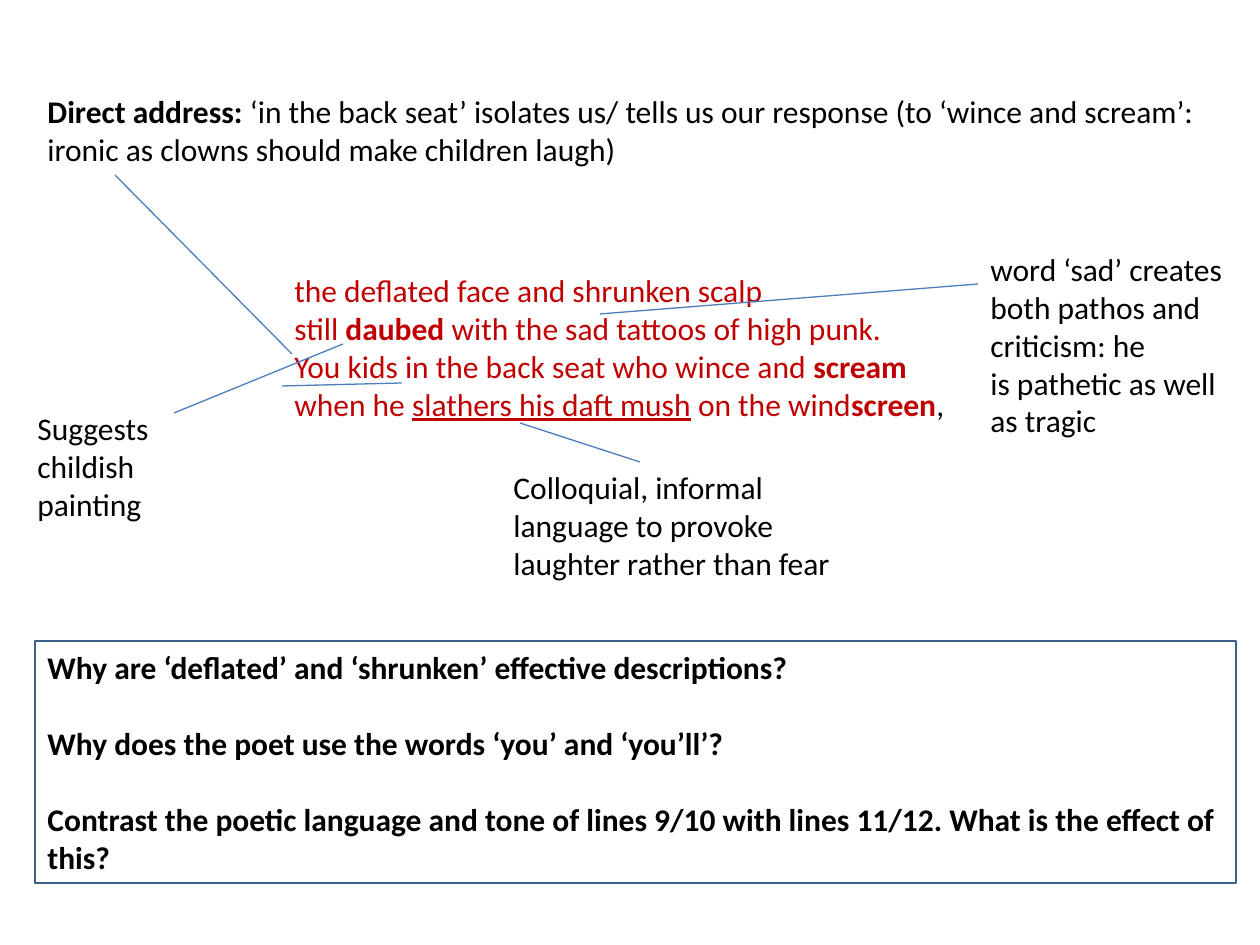
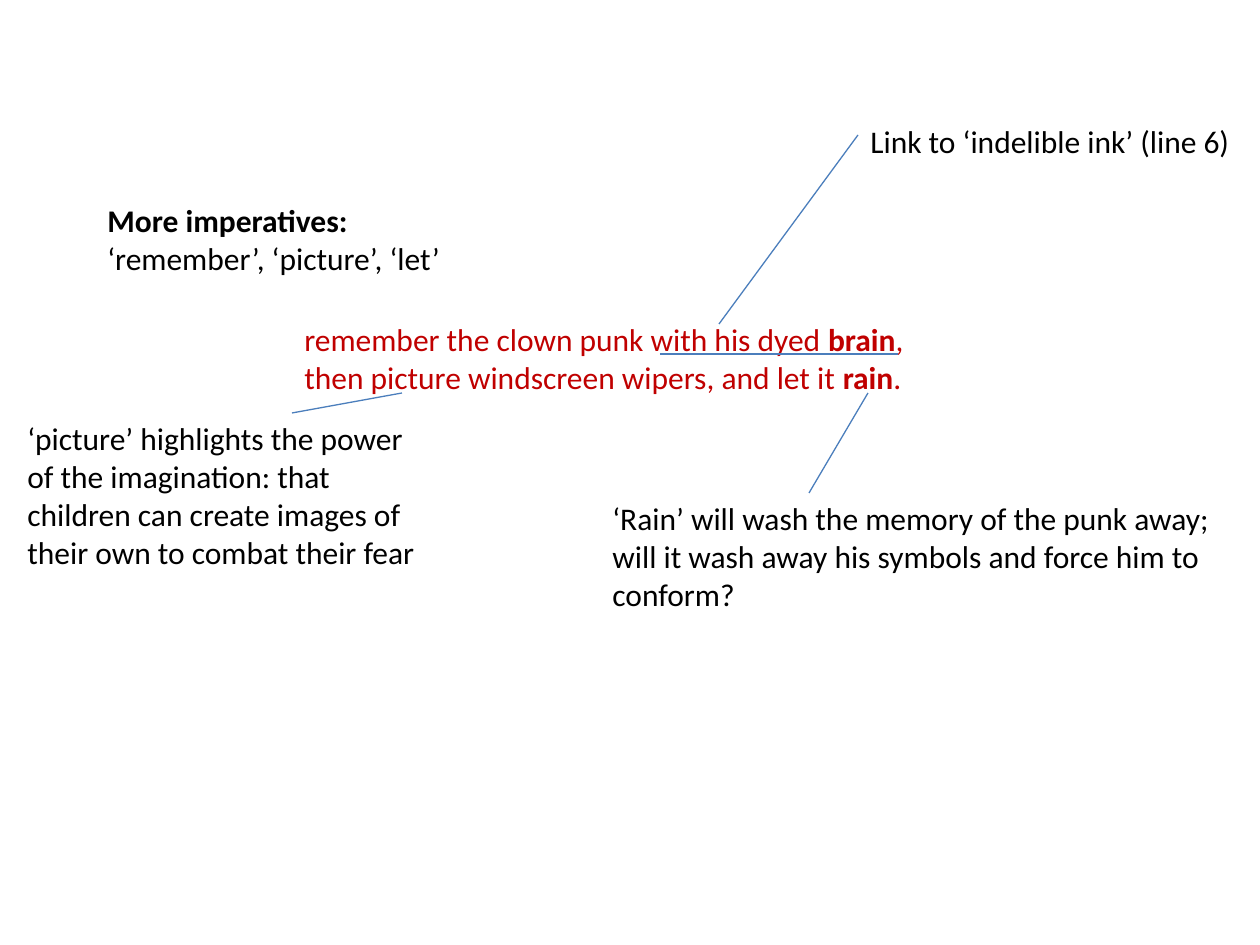
from lxml import etree
from pptx import Presentation
from pptx.dml.color import RGBColor
from pptx.enum.shapes import MSO_CONNECTOR, MSO_SHAPE
from pptx.enum.text import MSO_ANCHOR, PP_ALIGN
from pptx.oxml.ns import qn
from pptx.util import Pt

RECT = MSO_SHAPE.RECTANGLE
STRAIGHT = MSO_CONNECTOR.STRAIGHT
LEFT, TOP, MIDDLE = PP_ALIGN.LEFT, MSO_ANCHOR.TOP, MSO_ANCHOR.MIDDLE
SCALE = 914400 / 126
FONT, SIZE = "Calibri", 18
BLACK, RED, BLUE, NAVY = "000000", "C00000", "4B7EBC", "3A5F8C"


def px(*values):
    return [round(v * SCALE) for v in values]


def rgb(code):
    return RGBColor.from_string(code)


def write(frame, paras, color=BLACK, bold=None, gap=0, anchor=TOP):
    """Each paragraph is a string, or a list of strings and (text, style) pairs.

    A style is "b" for bold, "u" for underlined, or a colour.
    """
    frame.word_wrap = True
    frame.vertical_anchor = anchor
    for i, parts in enumerate(paras):
        para = frame.paragraphs[0] if i == 0 else frame.add_paragraph()
        para.alignment = LEFT
        para.space_before = Pt(gap if i else 0)
        font = para.font
        font.name, font.size, font.bold = FONT, Pt(SIZE), bold
        font.color.rgb = rgb(color)
        for part in [parts] if isinstance(parts, str) else parts:
            text, style = (part, "") if isinstance(part, str) else part
            run = para.add_run()
            run.text = text
            if style == "b":
                run.font.bold = True
            elif style == "u":
                run.font.underline = True
            elif style:
                run.font.color.rgb = rgb(style)


def note(slide, box, *paras, color=BLACK):
    write(slide.shapes.add_textbox(*px(*box)).text_frame, paras, color)


def link(slide, *ends):
    line = slide.shapes.add_connector(STRAIGHT, *px(*ends))
    line.line.color.rgb = rgb(BLUE)
    line.line.width = Pt(0.75)
    etree.SubElement(line._element.spPr, qn("a:effectLst"))


def panel(slide, box, *paras):
    shape = slide.shapes.add_shape(RECT, *px(*box))
    shape.shadow.inherit = False
    shape.fill.background()
    shape.line.color.rgb = rgb(NAVY)
    shape.line.width = Pt(0.75)
    write(shape.text_frame, paras, bold=True, gap=22, anchor=MIDDLE)


def address(slide):
    note(slide, (282, 265, 683, 204),
         "the deflated face and shrunken scalp",
         ["still ", ("daubed", "b"), " with the sad tattoos of high punk."],
         ["You kids in the back seat who wince and ", ("scream", "b")],
         ["when he ", ("slathers his daft mush", "u"), " on the wind",
          ("screen", "b"), (",", BLACK)],
         color=RED)
    link(slide, 343, 344, 174, 413)
    note(slide, (25, 403, 228, 127), "Suggests childish painting")
    link(slide, 282, 386, 402, 383)
    link(slide, 292, 354, 115, 175)
    note(slide, (35, 86, 1181, 89),
         [("Direct address: ", "b"),
          "‘in the back seat’ isolates us/ tells us our response (to ‘wince "
          "and scream’: ironic as clowns should make children laugh)"])
    panel(slide, (35, 641, 1201, 242),
          "Why are ‘deflated’ and ‘shrunken’ effective descriptions?",
          "Why does the poet use the words ‘you’ and ‘you’ll’?",
          "Contrast the poetic language and tone of lines 9/10 with lines "
          "11/12. What is the effect of this?")
    note(slide, (978, 244, 268, 204), "word ‘sad’ creates",
         "both pathos and criticism: he", "is pathetic as well as tragic")
    link(slide, 600, 314, 978, 284)
    note(slide, (501, 462, 397, 127),
         "Colloquial, informal language to provoke laughter rather than fear")
    link(slide, 520, 423, 640, 462)


def ending(slide):
    note(slide, (292, 314, 630, 127),
         ["remember the clown punk with his dyed ", ("brain", "b"), ","],
         ["then picture windscreen wipers, and let it ", ("rain", "b"), "."],
         color=RED)
    link(slide, 660, 354, 898, 354)
    link(slide, 719, 324, 858, 135)
    note(slide, (858, 116, 388, 50), "Link to ‘indelible ink’ (line 6)")
    link(slide, 868, 393, 809, 493)
    note(slide, (600, 493, 625, 127),
         "‘Rain’ will wash the memory of the punk away; will it wash away "
         "his symbols and force him to conform?")
    note(slide, (15, 413, 630, 165),
         "‘picture’ highlights the power", "of the imagination: that",
         "children can create images of", "their own to combat their fear")
    link(slide, 402, 393, 292, 413)
    note(slide, (95, 195, 387, 89),
         [("More imperatives: ", "b"), "‘remember’, ‘picture’, ‘let’"])


def main():
    deck = Presentation()
    deck.slide_width, deck.slide_height = px(1260, 945)
    for fill in (address, ending):
        fill(deck.slides.add_slide(deck.slide_layouts[6]))
    deck.save("out.pptx")


if __name__ == "__main__":
    main()
